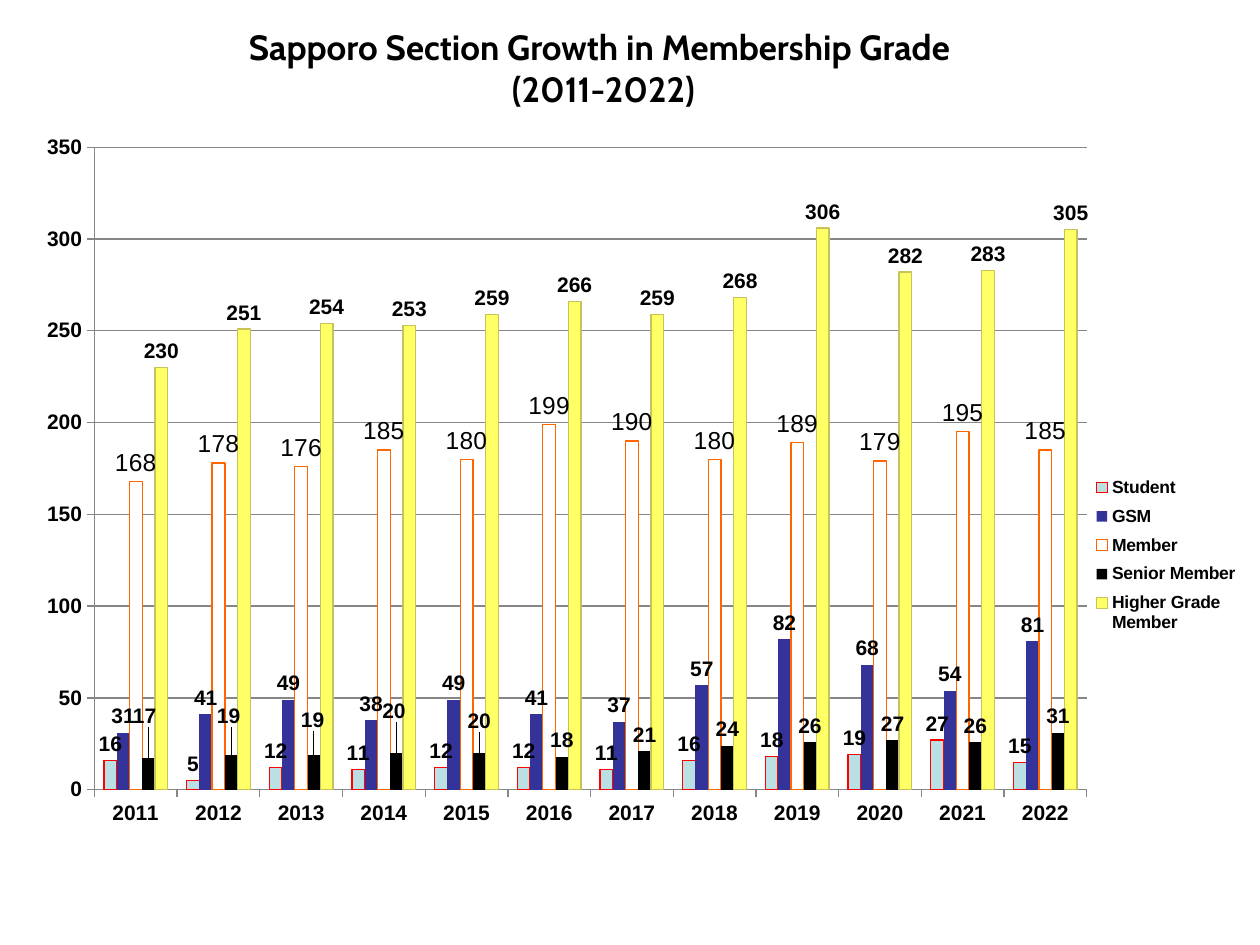
from dataclasses import dataclass

from lxml.etree import SubElement
from pptx import Presentation
from pptx.chart.data import CategoryChartData
from pptx.dml.color import RGBColor
from pptx.enum.chart import XL_CHART_TYPE, XL_LABEL_POSITION, XL_LEGEND_POSITION, XL_TICK_MARK
from pptx.enum.text import MSO_ANCHOR, PP_ALIGN
from pptx.oxml import parse_xml
from pptx.oxml.ns import nsdecls, qn
from pptx.util import Pt


@dataclass(frozen=True)
class Theme:
    text: str = "000000"
    grid: str = "868686"
    title_font: str = "Cabin"
    chart_font: str = "Arial"
    title_size: float = 20
    chart_size: float = 17.9
    axis_size: float = 12
    legend_size: float = 10


THEME = Theme()
YEARS = [str(year) for year in range(2011, 2023)]

# name, values, fill, outline, label size, label bold
GRADES = [
    ("Student", (16, 5, 12, 11, 12, 12, 11, 16, 18, 19, 27, 15), "BBE0E3", "FF0000", 12, True),
    ("GSM", (31, 41, 49, 38, 49, 41, 37, 57, 82, 68, 54, 81), "333399", None, 12, True),
    ("Member", (168, 178, 176, 185, 180, 199, 190, 180, 189, 179, 195, 185),
     "FFFFFF", "FF6600", 14, False),
    ("Senior Member", (17, 19, 19, 20, 20, 18, 21, 24, 26, 27, 26, 31), "000000", None, 12, True),
    ("Higher Grade Member", (230, 251, 254, 253, 259, 266, 259, 268, 306, 282, 283, 305),
     "FFFF66", "C8C358", 12, True),
]

# Shifts, as shares of the chart, that lift early Senior Member labels clear
SENIOR_SHIFTS = [(-0.003, -0.033), (-0.002, -0.028), (-0.001, -0.023), (-0.002, -0.032), (0, -0.02)]


def format_font(font, name=THEME.chart_font, size=THEME.axis_size, bold=True, color=THEME.text):
    font.name = name
    font.size = Pt(size)
    font.bold = bold
    font.color.rgb = RGBColor.from_string(color)


def write_text(shape, text, align=PP_ALIGN.CENTER, anchor=MSO_ANCHOR.MIDDLE, **font_format):
    frame = shape.text_frame
    frame.word_wrap = True
    frame.vertical_anchor = anchor
    paragraph = frame.paragraphs[0]
    paragraph.text = text
    paragraph.alignment = align
    for run in paragraph.runs:
        format_font(run.font, **font_format)


def make_layout(inner=False, **measures):
    """Return a manual chart layout from x, y, w and h shares."""
    layout = parse_xml(f"<c:layout {nsdecls('c')}/>")
    manual = SubElement(layout, qn("c:manualLayout"))
    settings = {"layoutTarget": "inner"} if inner else {}
    if "w" in measures:
        settings.update(xMode="edge", yMode="edge")
    for tag, value in {**settings, **measures}.items():
        SubElement(manual, qn(f"c:{tag}")).set("val", str(value))
    return layout


def place_part(element, layout, after=None):
    for old in element.findall(qn("c:layout")):
        element.remove(old)
    if after is None:
        element.insert(0, layout)
    else:
        element.find(qn(after)).addnext(layout)


def format_axis(axis):
    axis.major_tick_mark = XL_TICK_MARK.OUTSIDE
    axis.minor_tick_mark = XL_TICK_MARK.NONE
    axis.format.line.color.rgb = RGBColor.from_string(THEME.grid)
    format_font(axis.tick_labels.font)


def format_series(series, fill, outline, label_size, label_bold):
    series.invert_if_negative = False
    series.format.fill.solid()
    series.format.fill.fore_color.rgb = RGBColor.from_string(fill)
    line = series.format.line
    if outline:
        line.color.rgb = RGBColor.from_string(outline)
        line.width = Pt(0.75)
    else:
        line.fill.background()
    labels = series.data_labels
    labels.show_value = True
    labels.position = XL_LABEL_POSITION.OUTSIDE_END
    format_font(labels.font, size=label_size, bold=label_bold)


def shift_labels(series, shifts):
    for index in range(len(shifts)):
        label = series.points[index].data_label
        format_font(label.font)
        label.position = XL_LABEL_POSITION.OUTSIDE_END
    elements = series.data_labels._element.findall(qn("c:dLbl"))
    for element, (x, y) in zip(elements, shifts):
        place_part(element, make_layout(x=x, y=y), after="c:idx")


def add_membership_chart(slide):
    data = CategoryChartData(number_format="#,##0")
    data.categories = YEARS
    for name, values, *_ in GRADES:
        data.add_series(name, values)
    chart = slide.shapes.add_chart(
        XL_CHART_TYPE.COLUMN_CLUSTERED, Pt(-18), Pt(72), Pt(750), Pt(450), data).chart
    chart.has_title = False
    format_font(chart.font, size=THEME.chart_size, bold=False)

    # Plot and series
    plot = chart.plots[0]
    plot.gap_width = 150
    plot.overlap = 0
    plot.vary_by_categories = False
    for series, (_, _, *style) in zip(plot.series, GRADES):
        format_series(series, *style)
    shift_labels(plot.series[3], SENIOR_SHIFTS)
    plot_area = chart._chartSpace.chart.plotArea
    place_part(plot_area, make_layout(inner=True, x=0.096, y=0.027, w=0.756, h=0.816))

    # Axes
    format_axis(chart.category_axis)
    value_axis = chart.value_axis
    format_axis(value_axis)
    value_axis.minimum_scale = 0
    value_axis.maximum_scale = 350
    value_axis.major_unit = 50
    value_axis.tick_labels.number_format = "#,##0"
    value_axis.tick_labels.number_format_is_linked = False
    value_axis.has_major_gridlines = True
    value_axis.major_gridlines.format.line.color.rgb = RGBColor.from_string(THEME.grid)

    # Legend
    chart.has_legend = True
    legend = chart.legend
    legend.position = XL_LEGEND_POSITION.RIGHT
    legend.include_in_layout = False
    format_font(legend.font, size=THEME.legend_size)
    place_part(legend._element, make_layout(x=0.855, y=0.435, w=0.115, h=0.22),
               after="c:legendPos")


def add_title(slide, text):
    title = slide.shapes.title
    title.left, title.top, title.width, title.height = Pt(36), Pt(12.24), Pt(617.76), Pt(52.56)
    write_text(title, text, name=THEME.title_font, size=THEME.title_size)


def main():
    presentation = Presentation()
    presentation.slide_width, presentation.slide_height = Pt(720), Pt(540)
    slide = presentation.slides.add_slide(presentation.slide_layouts[5])
    add_title(slide, "Sapporo Section Growth in Membership Grade \v(2011-2022)")
    add_membership_chart(slide)
    presentation.save("out.pptx")


if __name__ == "__main__":
    main()
